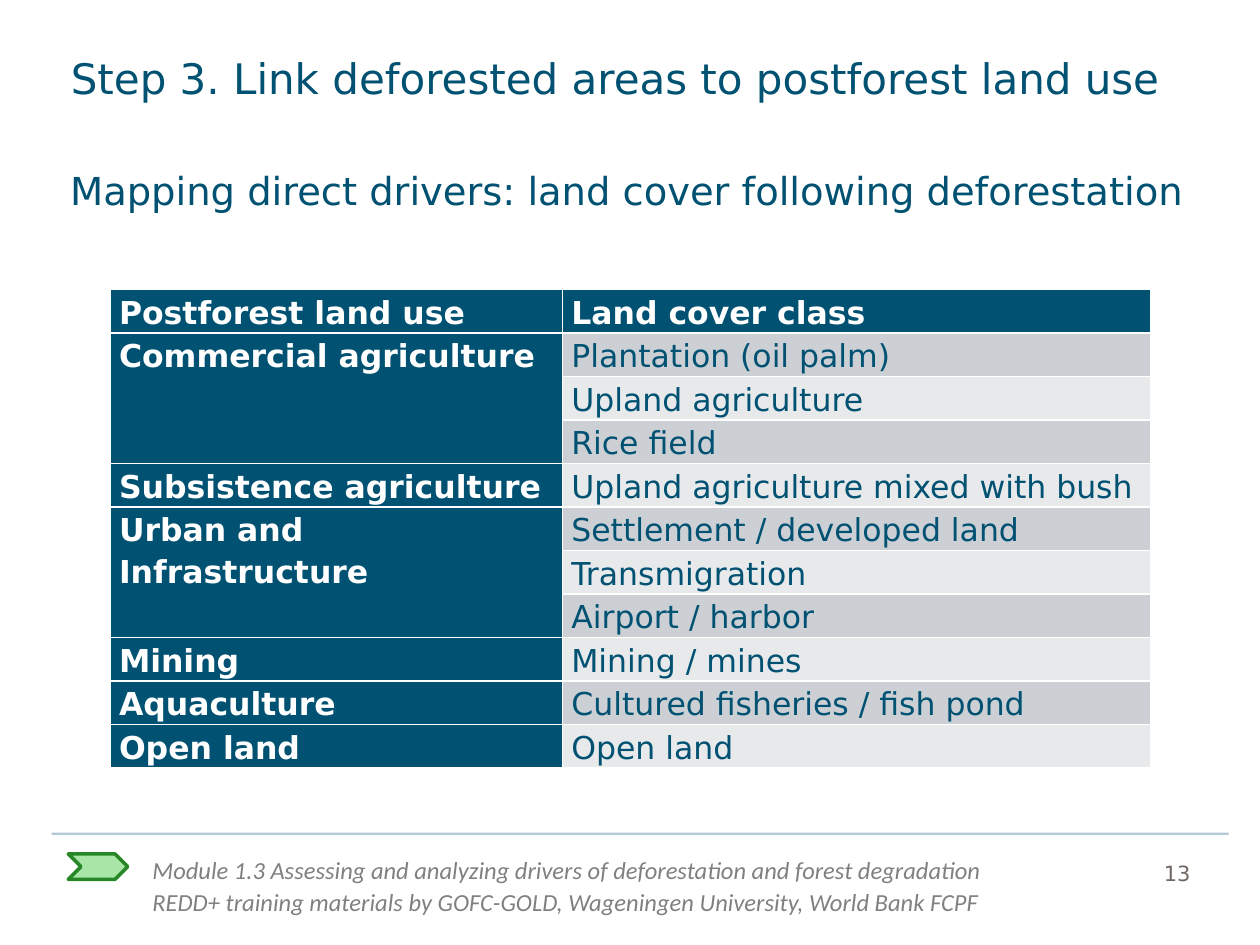
from lxml.etree import SubElement
from pptx import Presentation
from pptx.dml.color import RGBColor
from pptx.enum.shapes import MSO_CONNECTOR, MSO_SHAPE
from pptx.enum.text import MSO_ANCHOR, PP_ALIGN
from pptx.oxml.ns import qn
from pptx.util import Pt

NAVY = RGBColor(0x00, 0x51, 0x72)
WHITE = RGBColor(0xFF, 0xFF, 0xFF)
DARK_BAND = RGBColor(0xCC, 0xD0, 0xD5)
LIGHT_BAND = RGBColor(0xE7, 0xE9, 0xEB)
GRAY = RGBColor(0x80, 0x80, 0x80)
BROWN_GRAY = RGBColor(0x70, 0x67, 0x62)
GREEN = RGBColor(0xA8, 0xE6, 0xA8)
DARK_GREEN = RGBColor(0x27, 0x86, 0x26)

presentation = Presentation()
presentation.slide_width, presentation.slide_height = Pt(720), Pt(540)
slide = presentation.slides.add_slide(presentation.slide_layouts[6])


def style_font(paragraph, size, color, name="DejaVu Sans", bold=False, italic=False):
    font = paragraph.font
    font.name, font.size, font.color.rgb = name, Pt(size), color
    font.bold, font.italic = bold, italic


def add_text(lines, left, top, width, height, spacing, size, color, **font_options):
    text_frame = slide.shapes.add_textbox(
        Pt(left), Pt(top), Pt(width), Pt(height)).text_frame
    text_frame.word_wrap = True
    text_frame.text = "\n".join(lines)
    for paragraph in text_frame.paragraphs:
        paragraph.line_spacing = Pt(spacing)
        style_font(paragraph, size, color, **font_options)
    return text_frame


# Footer
add_text(["Module 1.3 Assessing and analyzing drivers of deforestation and forest degradation",
          "REDD+ training materials by GOFC-GOLD, Wageningen University, World Bank FCPF"],
         80, 484, 556.5, 44, 18, 14, GRAY, name="Calibri", italic=True)
add_text(["13"], 658, 484.5, 44, 24, 18, 12, BROWN_GRAY)

chevron = slide.shapes.add_shape(MSO_SHAPE.CHEVRON, Pt(39), Pt(488), Pt(34), Pt(14.5))
chevron.shadow.inherit = False
chevron.fill.solid()
chevron.fill.fore_color.rgb = GREEN
chevron.line.color.rgb = DARK_GREEN
chevron.line.width = Pt(2)

# Translucent footer rule
rule = slide.shapes.add_connector(
    MSO_CONNECTOR.STRAIGHT, Pt(29.5), Pt(476.5), Pt(702), Pt(476.5))
rule.line.color.rgb = NAVY
rule.line.width = Pt(1.25)
properties = rule.line._get_or_add_ln().getparent()
SubElement(next(properties.iter(qn("a:srgbClr"))), qn("a:alpha"), val="30000")
SubElement(properties, qn("a:effectLst"))

# Title and subtitle
title = add_text(["Step 3. Link deforested areas to postforest land use"],
                 39, 18, 664.5, 66, 40, 24, NAVY)
title.margin_left, title.margin_top, title.margin_bottom = Pt(1.5), Pt(0), Pt(25)
title.vertical_anchor = MSO_ANCHOR.BOTTOM
add_text(["Mapping direct drivers: land cover following deforestation"],
         33, 93, 671, 350, 25, 22, NAVY)

# Land use table: each use with its cover classes
land_uses = [
    ("Postforest land use", ["Land cover class"]),
    ("Commercial agriculture", ["Plantation (oil palm)", "Upland agriculture", "Rice field"]),
    ("Subsistence agriculture", ["Upland agriculture mixed with bush"]),
    ("Urban and Infrastructure",
     ["Settlement / developed land", "Transmigration", "Airport / harbor"]),
    ("Mining", ["Mining / mines"]),
    ("Aquaculture", ["Cultured fisheries / fish pond"]),
    ("Open land", ["Open land"]),
]
row_count = sum(len(classes) for _, classes in land_uses)
table = slide.shapes.add_table(
    row_count, 2, Pt(63), Pt(165.5), Pt(594.5), Pt(24 * row_count)).table
table.columns[0].width, table.columns[1].width = Pt(258.5), Pt(336)

row = 0
for land_use, classes in land_uses:
    table.cell(row, 0).text = land_use
    for offset, cover_class in enumerate(classes):
        table.cell(row + offset, 1).text = cover_class
    if len(classes) > 1:
        table.cell(row, 0).merge(table.cell(row + len(classes) - 1, 0))
    row += len(classes)

for row in range(row_count):
    for column in range(2):
        cell = table.cell(row, column)
        heading = row == 0 or column == 0
        cell.margin_left = cell.margin_right = Pt(5)
        cell.margin_top = cell.margin_bottom = Pt(0)
        cell.fill.solid()
        cell.fill.fore_color.rgb = NAVY if heading else DARK_BAND if row % 2 else LIGHT_BAND
        paragraph = cell.text_frame.paragraphs[0]
        paragraph.line_spacing = 1.15
        # The two-line heading stays ragged
        justified = heading and not cell.is_merge_origin or row == 1 and heading
        paragraph.alignment = PP_ALIGN.JUSTIFY if justified else PP_ALIGN.LEFT
        style_font(paragraph, 18, WHITE if heading else NAVY, bold=heading)

presentation.save("out.pptx")
